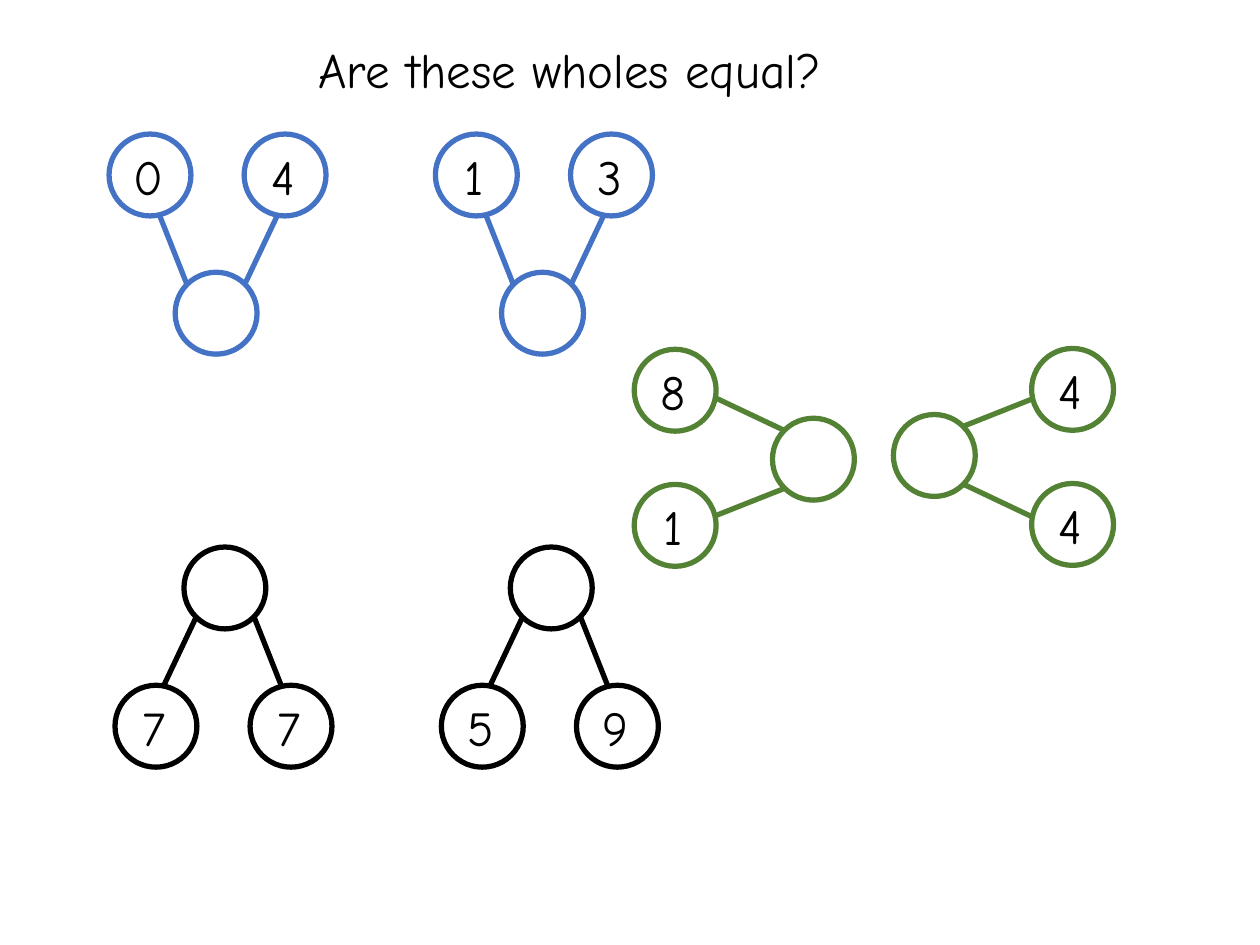
from math import cos, radians, sin

from lxml.etree import SubElement
from pptx import Presentation
from pptx.dml.color import RGBColor
from pptx.enum.shapes import MSO_CONNECTOR, MSO_SHAPE
from pptx.enum.text import MSO_ANCHOR, PP_ALIGN
from pptx.oxml.ns import qn
from pptx.util import Pt

TITLE = "Are these wholes equal?"
COLORS = {"blue": "4472C4", "green": "548235", "black": "000000", "white": "FFFFFF"}
FONT = "Comic Neue"
DIAMETER = 46.8
LABEL_W, LABEL_H = 34.5, 41

# centre of the whole, clockwise turn, colour, the two parts
BONDS = [
    ((123.5, 179), 180, "blue", ("4", "0")),
    ((310, 179), 180, "blue", ("3", "1")),
    ((464.8, 262.4), 90, "green", ("8", "1")),
    ((533.9, 260.3), 270, "green", ("4", "4")),
    ((128.5, 336), 0, "black", ("7", "7")),
    ((315, 336), 0, "black", ("5", "9")),
]
# offsets from the whole, unturned: part centre, line start, line end
ARMS = [
    ((-39.4, 79), (-16.5, 16.8), (-34.9, 55.7)),
    ((37.8, 79), (16.8, 16.8), (32.2, 55.7)),
]


def rgb(name):
    return RGBColor.from_string(COLORS[name])


def write(tf, text, size=28, color="black", align=PP_ALIGN.CENTER):
    tf.word_wrap = True
    tf.vertical_anchor = MSO_ANCHOR.MIDDLE
    p = tf.paragraphs[0]
    p.alignment = align
    r = p.add_run()
    r.text = text
    r.font.name = FONT
    r.font.size = Pt(size)
    r.font.color.rgb = rgb(color)


def turn(center, offset, angle):
    a = radians(angle)
    x, y = offset
    return (center[0] + x * cos(a) - y * sin(a),
            center[1] + x * sin(a) + y * cos(a))


def box(center, w, h):
    return Pt(center[0] - w / 2), Pt(center[1] - h / 2), Pt(w), Pt(h)


def add_circle(shapes, center, color):
    s = shapes.add_shape(MSO_SHAPE.OVAL, *box(center, DIAMETER, DIAMETER))
    s.shadow.inherit = False
    s.fill.solid()
    s.fill.fore_color.rgb = rgb("white")
    s.line.color.rgb = rgb(color)
    s.line.width = Pt(3)


def add_line(shapes, start, end, color):
    c = shapes.add_connector(MSO_CONNECTOR.STRAIGHT, *map(Pt, start + end))
    c.line.color.rgb = rgb(color)
    c.line.width = Pt(3)
    SubElement(c._element.spPr, qn("a:effectLst"))


def add_bond(shapes, center, angle, color, parts):
    add_circle(shapes, center, color)
    for text, arm in zip(parts, ARMS):
        part, start, end = (turn(center, offset, angle) for offset in arm)
        add_circle(shapes, part, color)
        add_line(shapes, start, end, color)
        label = (part[0] - 1, part[1] + 0.5)
        write(shapes.add_textbox(*box(label, LABEL_W, LABEL_H)).text_frame, text)


def main():
    """Build a slide of part-whole number bonds to compare."""
    prs = Presentation()
    prs.slide_width, prs.slide_height = Pt(720), Pt(540)
    slide = prs.slides.add_slide(prs.slide_layouts[5])
    title = slide.shapes.title
    title.left, title.top, title.width, title.height = box((325.5, 39.2), 551.5, 41)
    write(title.text_frame, TITLE)
    for bond in BONDS:
        add_bond(slide.shapes, *bond)
    prs.save("out.pptx")


if __name__ == "__main__":
    main()
